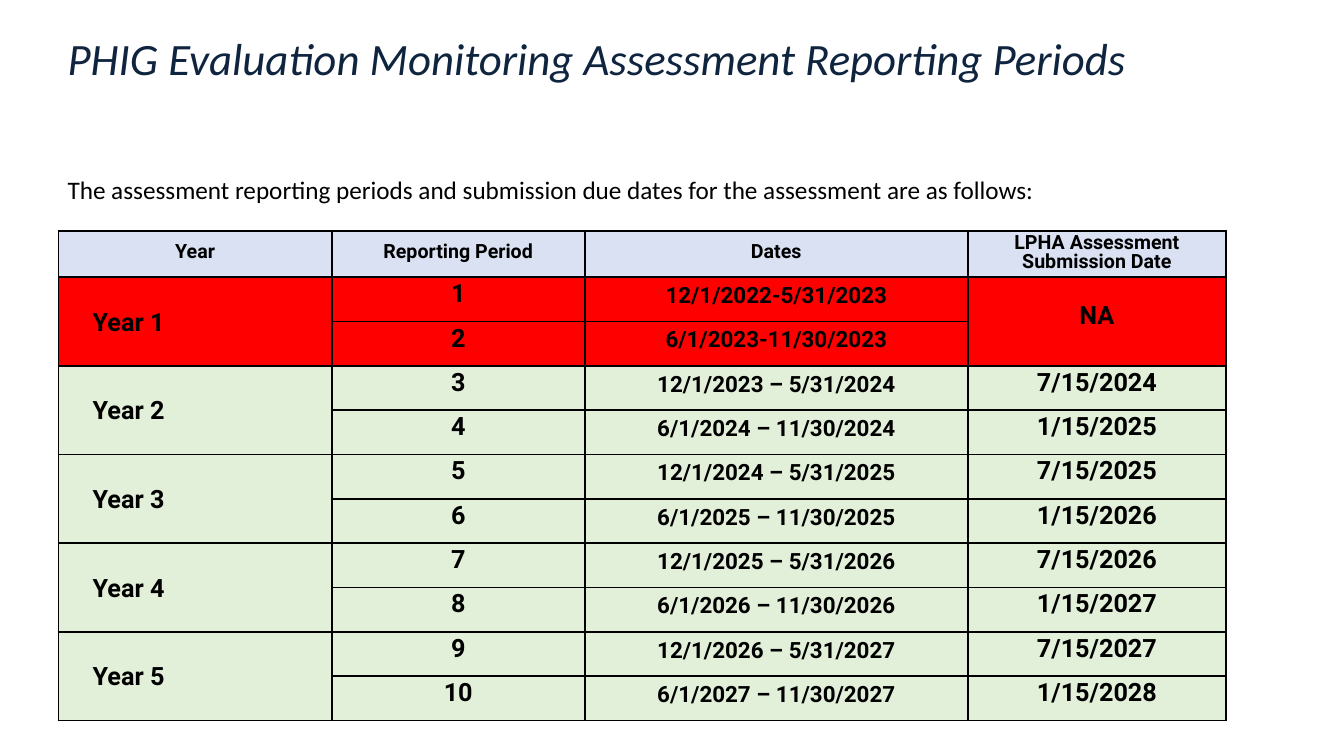
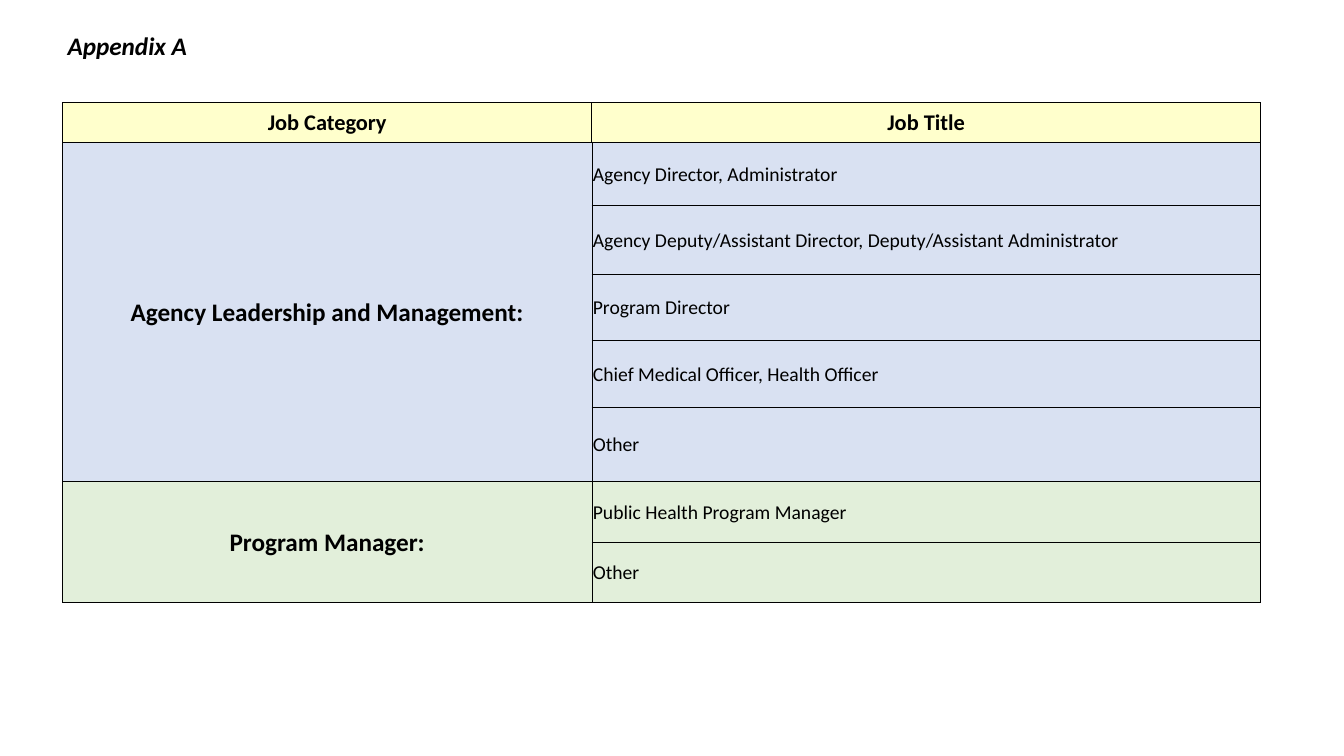
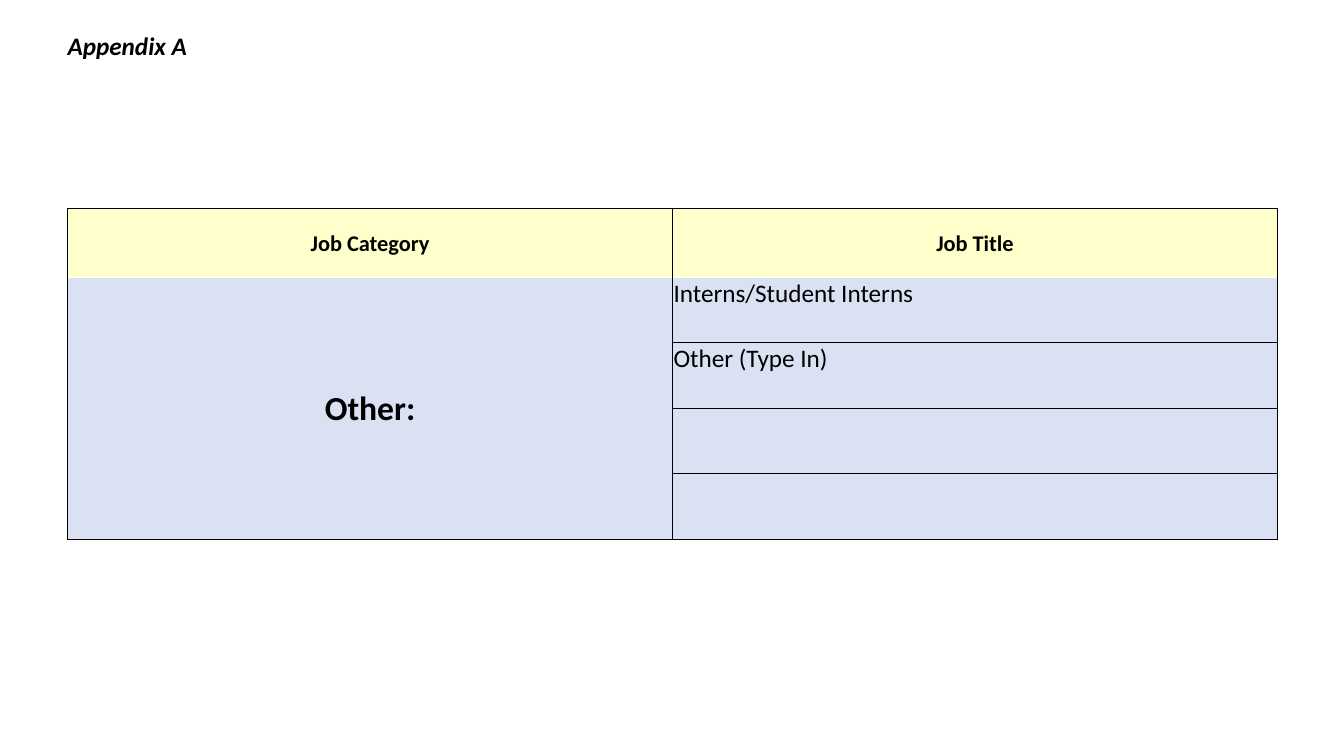
from lxml.etree import SubElement
from pptx import Presentation
from pptx.dml.color import RGBColor
from pptx.enum.text import MSO_ANCHOR as Anchor, PP_ALIGN as Align
from pptx.oxml.ns import qn
from pptx.util import Inches, Pt

BLACK = RGBColor(0x00, 0x00, 0x00)
NAVY = RGBColor(0x0F, 0x24, 0x3E)
RED = RGBColor(0xFF, 0x00, 0x00)
PALE_BLUE = RGBColor(0xD9, 0xE1, 0xF3)
PALE_GREEN = RGBColor(0xE2, 0xEF, 0xD9)
CATEGORY_BLUE = RGBColor(0xD9, 0xE1, 0xF2)
CATEGORY_GREEN = RGBColor(0xE2, 0xEF, 0xDA)
CREAM = RGBColor(0xFF, 0xFF, 0xCC)

BODY_FONT = "Calibri"
PERIOD_FONT = "Roboto"
TIGHT = {"line_spacing": Pt(13.6), "alignment": Align.CENTER}
CENTERED = {"alignment": Align.CENTER}
NO_MARGINS = (0, 0, 0, 0)
JOB_MARGINS = (0.01, 0.01, 0.01, 0)
ALL_SIDES = "LRTB"

PERIOD_HEADERS = ["Year", "Reporting Period", "Dates", "LPHA Assessment Submission Date"]
PERIODS_BY_YEAR = [
    [("12/1/2022-5/31/2023", "NA"), ("6/1/2023-11/30/2023", None)],
    [("12/1/2023 – 5/31/2024", "7/15/2024"), ("6/1/2024 – 11/30/2024", "1/15/2025")],
    [("12/1/2024 – 5/31/2025", "7/15/2025"), ("6/1/2025 – 11/30/2025", "1/15/2026")],
    [("12/1/2025 – 5/31/2026", "7/15/2026"), ("6/1/2026 – 11/30/2026", "1/15/2027")],
    [("12/1/2026 – 5/31/2027", "7/15/2027"), ("6/1/2027 – 11/30/2027", "1/15/2028")],
]
LEADERSHIP_TITLES = [
    "Agency Director, Administrator",
    "Agency Deputy/Assistant Director, Deputy/Assistant Administrator",
    "Program Director",
    "Chief Medical Officer, Health Officer",
    "Other",
]
MANAGER_TITLES = ["Public Health Program Manager", "Other"]
OTHER_TITLES = ["Interns/Student Interns", "Other (Type In)", "", ""]


def set_all(target, values):
    for attribute, value in values.items():
        setattr(target, attribute, value)


def set_margins(target, margins):
    sides = ("left", "top", "right", "bottom")
    set_all(target, {f"margin_{side}": Inches(m) for side, m in zip(sides, margins)})


class Deck:
    def __init__(self):
        self.presentation = Presentation()
        self.presentation.slide_width = Inches(13.33)
        self.presentation.slide_height = Inches(7.5)
        self.slide = None

    def new_slide(self, title, **style):
        self.slide = self.presentation.slides.add_slide(self.presentation.slide_layouts[6])
        self.text_box(title, 0.3, italic=True, **style)

    def add_text(self, frame, text, paragraph_format=None, color=BLACK, size=18, **font):
        paragraph = frame.paragraphs[0]
        set_all(paragraph, paragraph_format or {})
        run = paragraph.add_run()
        run.text = text
        set_all(run.font, {"name": BODY_FONT, "size": Pt(size), **font})
        run.font.color.rgb = color

    def text_box(self, text, top, height=0.3, **style):
        box = self.slide.shapes.add_textbox(
            Inches(0.67), Inches(top), Inches(12), Inches(height))
        box.text_frame.word_wrap = True
        set_margins(box.text_frame, NO_MARGINS)
        self.add_text(box.text_frame, text, **style)

    def table(self, left, top, widths, heights):
        table = self.slide.shapes.add_table(
            len(heights), len(widths), Inches(left), Inches(top),
            Inches(sum(widths)), Inches(sum(heights))).table
        set_all(table, {"first_row": False, "horz_banding": False})
        for column, width in zip(table.columns, widths):
            column.width = Inches(width)
        for row, height in zip(table.rows, heights):
            row.height = Inches(height)
        return table

    def border(self, cell, width, sides):
        properties = cell._tc.get_or_add_tcPr()
        for side in sides:
            line = SubElement(properties, qn(f"a:ln{side}"), w=str(Pt(width)))
            fill = SubElement(line, qn("a:solidFill"))
            SubElement(fill, qn("a:srgbClr"), val=str(BLACK))

    def cell(self, table, row, column, text, fill, line=0.5, sides=ALL_SIDES, span=1,
             margins=JOB_MARGINS, anchor=Anchor.MIDDLE, **style):
        """Fill one cell, merged downwards over span rows."""
        for covered in range(row, row + span):
            part = table.cell(covered, column)
            self.border(part, line, sides)
            part.fill.solid()
            part.fill.fore_color.rgb = fill
        cell = table.cell(row, column)
        if span > 1:
            cell.merge(table.cell(row + span - 1, column))
        set_margins(cell, margins)
        cell.vertical_anchor = anchor
        if text:
            self.add_text(cell.text_frame, text, **style)

    def period_cell(self, table, row, column, text, fill, **style):
        options = {"line": 1.5, "margins": NO_MARGINS, "paragraph_format": TIGHT, **style}
        self.cell(table, row, column, text, fill, name=PERIOD_FONT, bold=True, **options)

    def job_header(self, table, sides=ALL_SIDES):
        for column, heading in enumerate(["Job Category", "Job Title"]):
            self.cell(table, 0, column, heading, CREAM, line=1, sides=sides,
                      paragraph_format=CENTERED, size=16, bold=True)

    def job_category(self, table, row, category, titles, fill, category_size=18,
                     title_size=14, title_anchor=Anchor.MIDDLE):
        self.cell(table, row, 0, category, fill, span=len(titles),
                  paragraph_format=CENTERED, size=category_size, bold=True)
        for offset, title in enumerate(titles):
            self.cell(table, row + offset, 1, title, fill, anchor=title_anchor, size=title_size)


def reporting_periods(deck):
    deck.new_slide("PHIG Evaluation Monitoring Assessment Reporting Periods",
                   size=32, color=NAVY, height=0.84)
    deck.text_box("The assessment reporting periods and submission due dates "
                  "for the assessment are as follows:", 1.73, height=0.91)
    table = deck.table(0.58, 2.29, [2.71, 2.51, 3.8, 2.56], [0.46] + [0.44] * 10)
    for column, heading in enumerate(PERIOD_HEADERS):
        deck.period_cell(table, 0, column, heading, PALE_BLUE, size=14)
    row = 1
    for year, periods in enumerate(PERIODS_BY_YEAR, start=1):
        fill = RED if year == 1 else PALE_GREEN
        deck.period_cell(table, row, 0, f"Year {year}", fill, span=len(periods),
                         margins=(0.34, 0, 0, 0), paragraph_format={"line_spacing": 1.07})
        for dates, due in periods:
            deck.period_cell(table, row, 1, str(row), fill)
            deck.period_cell(table, row, 2, dates, fill, size=16)
            if due:
                deck.period_cell(table, row, 3, due, fill, span=2 if due == "NA" else 1)
            row += 1


def leadership_jobs(deck):
    deck.new_slide("Appendix A", bold=True)
    table = deck.table(0.62, 1.02, [5.25, 6.63],
                       [0.39, 0.63, 0.68, 0.66, 0.66, 0.74, 0.6, 0.6])
    deck.job_header(table)
    deck.job_category(table, 1, "Agency Leadership and Management:",
                      LEADERSHIP_TITLES, CATEGORY_BLUE)
    deck.job_category(table, 1 + len(LEADERSHIP_TITLES), "Program Manager:",
                      MANAGER_TITLES, CATEGORY_GREEN)


def other_jobs(deck):
    deck.new_slide("Appendix A", bold=True)
    jobs = deck.table(0.67, 2.75, [6, 6], [0.65] * len(OTHER_TITLES))
    deck.job_category(jobs, 0, "Other:", OTHER_TITLES, CATEGORY_BLUE,
                      category_size=24, title_size=18, title_anchor=Anchor.TOP)
    deck.job_header(deck.table(0.67, 2.07, [6, 6], [0.68]), sides="LRT")


def main():
    deck = Deck()
    reporting_periods(deck)
    leadership_jobs(deck)
    other_jobs(deck)
    deck.presentation.save("out.pptx")


if __name__ == "__main__":
    main()
